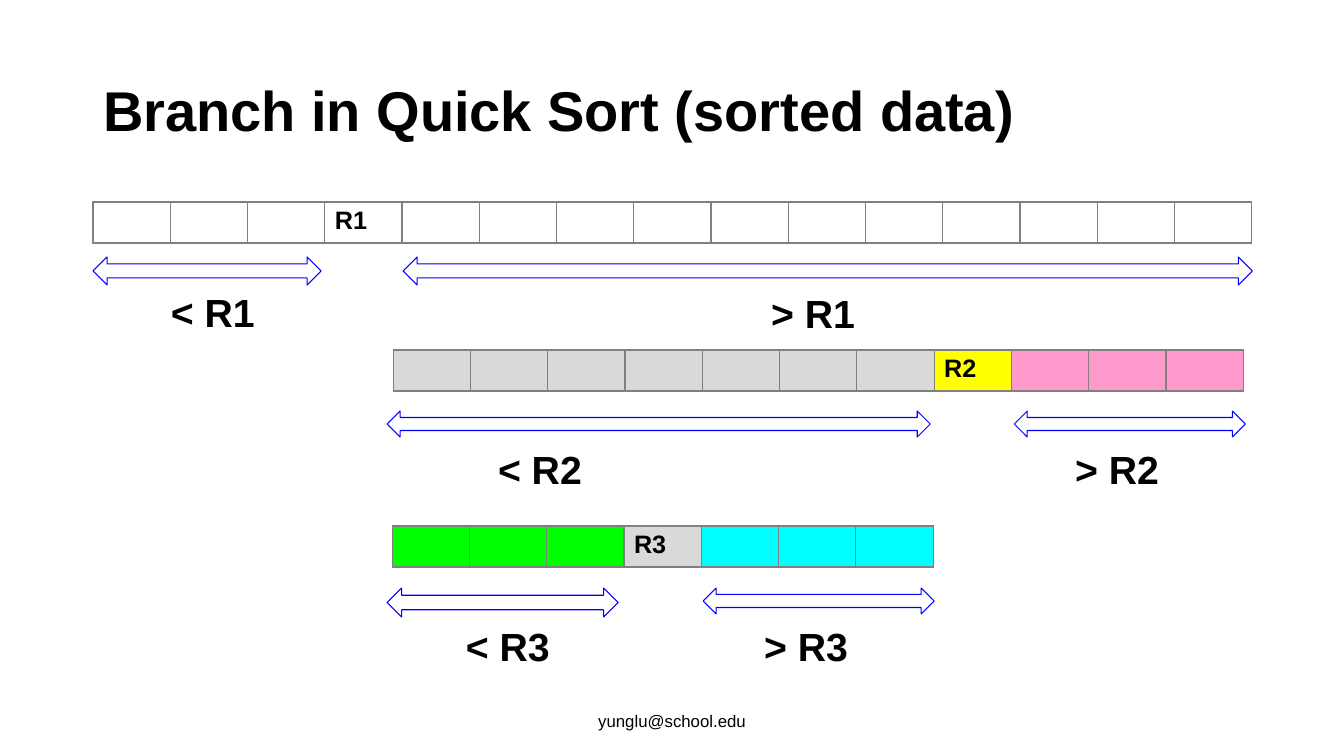
from lxml.etree import SubElement
from pptx import Presentation
from pptx.dml.color import RGBColor
from pptx.enum.shapes import MSO_SHAPE
from pptx.enum.text import MSO_ANCHOR as ANCHOR, MSO_AUTO_SIZE as AUTO, PP_ALIGN as ALIGN
from pptx.oxml.ns import qn
from pptx.util import Emu, Inches, Pt

BLACK = RGBColor(0, 0, 0)
BLUE = RGBColor(0, 0, 255)
GRAY = RGBColor(128, 128, 128)
SILVER = RGBColor(217, 217, 217)
YELLOW = RGBColor(255, 255, 0)
PINK = RGBColor(255, 153, 204)
GREEN = RGBColor(0, 255, 0)
CYAN = RGBColor(0, 255, 255)

TITLE = "Branch in Quick Sort (sorted data)"
FOOTER = "yunglu@school.edu"
ARRAYS = [
    dict(box=(93, 202, 1159, 41), pivot=3, name="R1", fills=[None] * 15),
    dict(box=(393, 350, 850, 41), pivot=7, name="R2",
         fills=[SILVER] * 7 + [YELLOW] + [PINK] * 3),
    dict(box=(392, 526, 541, 41), pivot=3, name="R3",
         fills=[GREEN] * 3 + [SILVER] + [CYAN] * 3),
]
BRANCHES = [
    ("< R1", (161, 283), (93, 257, 228, 28)),
    ("> R1", (761, 284), (403, 257, 849, 28)),
    ("< R2", (488, 440), (387, 411, 543, 26)),
    ("> R2", (1065, 440), (1014, 411, 231, 26)),
    ("< R3", (456, 617), (387, 588, 231, 29)),
    ("> R3", (754, 617), (703, 588, 231, 26)),
]
LABEL_SIZE = (105, 58)


def px(length):
    return Emu(round(length * 914400 / 100.8))


def place(box):
    return [px(length) for length in box]


def write(frame, text, size, bold=True, align=ALIGN.LEFT, spacing=1.0):
    paragraph = frame.paragraphs[0]
    paragraph.alignment = align
    paragraph.line_spacing = spacing
    run = paragraph.add_run()
    run.text = text
    run.font.name = "Arial"
    run.font.size = Pt(size)
    run.font.bold = bold
    run.font.color.rgb = BLACK


def outline(cell):
    properties = cell._tc.get_or_add_tcPr()
    for side in ("a:lnL", "a:lnR", "a:lnT", "a:lnB"):
        border = SubElement(properties, qn(side), w=str(Pt(1)))
        solid = SubElement(border, qn("a:solidFill"))
        SubElement(solid, qn("a:srgbClr"), val=str(GRAY))


def draw_array(slide, box, pivot, name, fills):
    count = len(fills)
    table = slide.shapes.add_table(1, count, *place(box)).table
    table.first_row = table.horz_banding = False
    for index, fill in enumerate(fills):
        table.columns[index].width = px(box[2] / count)
        cell = table.cell(0, index)
        outline(cell)
        if fill is None:
            cell.fill.background()
        else:
            cell.fill.solid()
            cell.fill.fore_color.rgb = fill
        if index == pivot:
            write(cell.text_frame, name, 18)


def draw_branch(slide, label, corner, span):
    caption = slide.shapes.add_textbox(*place(corner + LABEL_SIZE)).text_frame
    caption.word_wrap = False
    caption.auto_size = AUTO.SHAPE_TO_FIT_TEXT
    write(caption, label, 28)
    arrow = slide.shapes.add_shape(MSO_SHAPE.LEFT_RIGHT_ARROW, *place(span))
    arrow.shadow.inherit = False
    arrow.fill.background()
    arrow.line.color.rgb = BLUE
    arrow.line.width = Pt(0.75)


def main():
    deck = Presentation()
    deck.slide_width, deck.slide_height = Inches(13.33), Inches(7.5)
    slide = deck.slides.add_slide(deck.slide_layouts[5])

    title = slide.shapes.title
    title.left, title.top, title.width, title.height = place((93, 40, 1159, 146))
    title.text_frame.auto_size = AUTO.NONE
    title.text_frame.vertical_anchor = ANCHOR.MIDDLE
    write(title.text_frame, TITLE, 40, spacing=0.9)

    footer = slide.shapes.add_textbox(*place((445, 701, 454, 40))).text_frame
    footer.word_wrap = True
    footer.vertical_anchor = ANCHOR.MIDDLE
    write(footer, FOOTER, 12, bold=False, align=ALIGN.CENTER)

    for array in ARRAYS:
        draw_array(slide, **array)
    for branch in BRANCHES:
        draw_branch(slide, *branch)

    deck.save("out.pptx")


if __name__ == "__main__":
    main()
